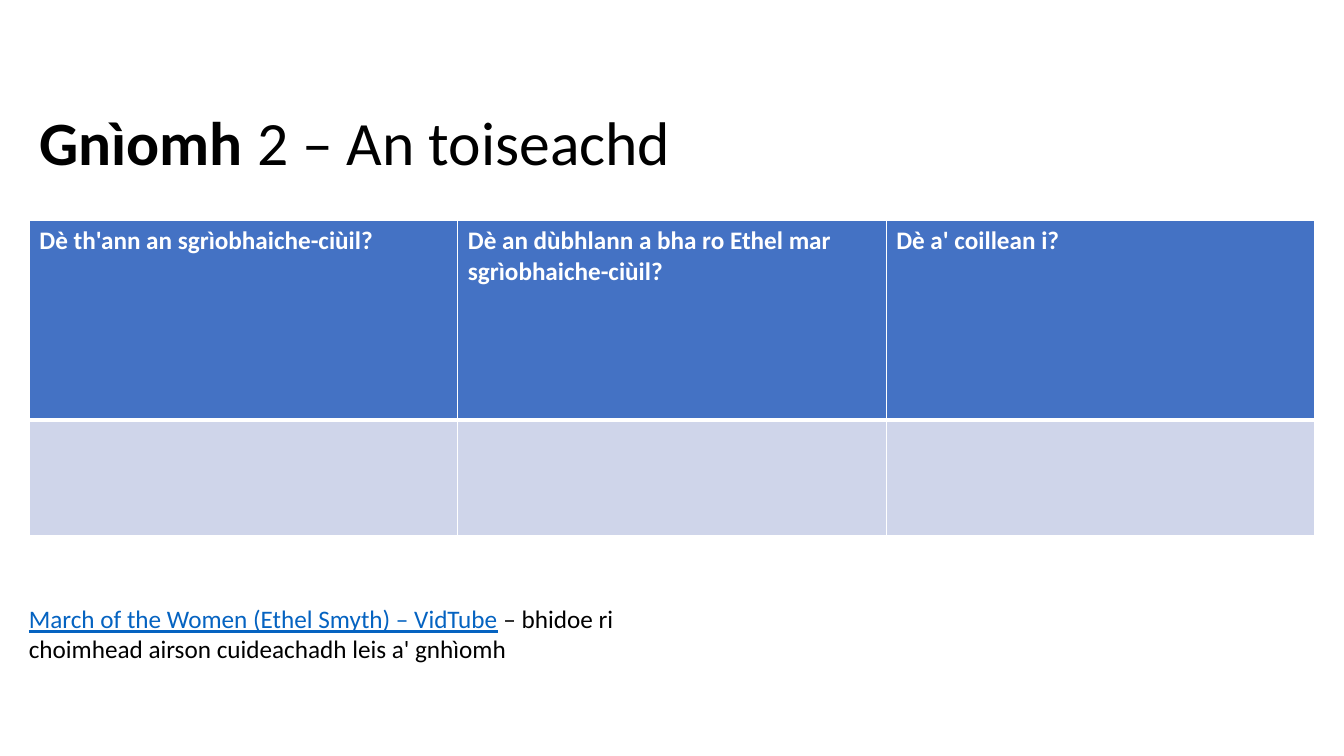
from lxml import etree
from pptx import Presentation
from pptx import util as u
from pptx.dml.color import RGBColor
from pptx.enum import text
from pptx.oxml import ns

PX = 9525
FONT = "Calibri"
COLORS = {
    "header": "4472C4",
    "body": "CFD5EA",
    "border": "FFFFFF",
    "header_text": "FFFFFF",
    "text": "000000",
    "link": "0563C1",
}


def format_run(run, size, color, bold=False, underline=False):
    run.font.name = FONT
    run.font.size = u.Pt(size)
    run.font.bold = bold
    run.font.underline = underline
    run.font.color.rgb = RGBColor.from_string(COLORS[color])


def add_border(cell, side, points):
    properties = cell._tc.get_or_add_tcPr()
    line = etree.SubElement(properties, ns.qn(f"a:ln{side}"), w=str(u.Pt(points)))
    fill = etree.SubElement(line, ns.qn("a:solidFill"))
    etree.SubElement(fill, ns.qn("a:srgbClr"), val=COLORS["border"])


presentation = Presentation()
presentation.slide_width = 1280 * PX
presentation.slide_height = 720 * PX
slide = presentation.slides.add_slide(presentation.slide_layouts[5])

title = slide.shapes.title
title.left, title.top, title.width, title.height = (n * PX for n in (28, 94, 640, 81))
title.text_frame.auto_size = text.MSO_AUTO_SIZE.NONE
title.text_frame.vertical_anchor = text.MSO_ANCHOR.TOP
paragraph = title.text_frame.paragraphs[0]
paragraph.alignment = text.PP_ALIGN.LEFT
for wording, bold in (("Gnìomh ", True), ("2 – An toiseachd", False)):
    run = paragraph.add_run()
    run.text = wording
    format_run(run, 44, "text", bold=bold)

questions = [
    "Dè th'ann an sgrìobhaiche-ciùil?",
    "Dè an dùbhlann a bha ro Ethel mar sgrìobhaiche-ciùil?",
    "Dè a' coillean i?",
]
row_heights = [190, 110]
column_width = 408
table = slide.shapes.add_table(
    len(row_heights), len(questions), 28 * PX, 210 * PX,
    column_width * len(questions) * PX, sum(row_heights) * PX,
).table
for column in table.columns:
    column.width = column_width * PX

row_styles = [("header", {"L": 1, "R": 1, "T": 1, "B": 3}),
              ("body", {"L": 1, "R": 1, "T": 3, "B": 1})]
for row, height, (fill, borders) in zip(table.rows, row_heights, row_styles):
    row.height = height * PX
    for cell in row.cells:
        for side, points in borders.items():
            add_border(cell, side, points)
        cell.fill.solid()
        cell.fill.fore_color.rgb = RGBColor.from_string(COLORS[fill])

for cell, question in zip(table.rows[0].cells, questions):
    cell.text_frame.text = question
    format_run(cell.text_frame.paragraphs[0].runs[0], 18, "header_text", bold=True)

video_note = slide.shapes.add_textbox(18 * PX, 570 * PX, 640 * PX, 68 * PX)
video_note.text_frame.word_wrap = True
paragraph = video_note.text_frame.paragraphs[0]
for wording, color, underline in (
    ("March of the Women (Ethel Smyth) – VidTube", "link", True),
    (" – bhidoe ri choimhead airson cuideachadh leis a' gnhìomh", "text", False),
):
    run = paragraph.add_run()
    run.text = wording
    format_run(run, 18, color, underline=underline)

presentation.save("out.pptx")
